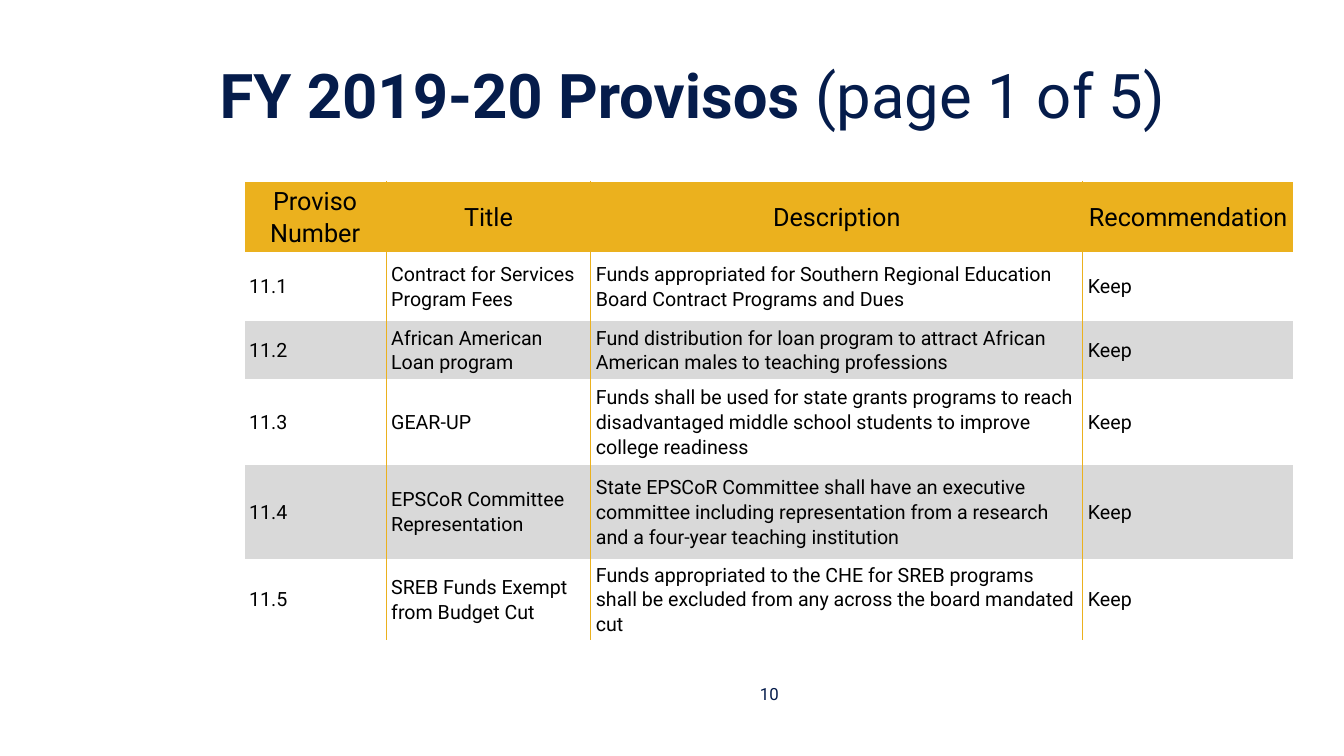
from dataclasses import dataclass

from lxml.etree import SubElement
from pptx import Presentation
from pptx.dml.color import RGBColor
from pptx.enum.text import MSO_ANCHOR as Anchor, PP_ALIGN as Align
from pptx.oxml.ns import qn
from pptx.util import Inches, Pt


@dataclass(frozen=True)
class Theme:
    font: str = "Roboto"
    navy: str = "051C4B"
    gold: str = "EBB11E"
    gray: str = "D9D9D9"
    white: str = "FFFFFF"
    black: str = "000000"
    title_size: int = 44
    header_size: int = 18
    body_size: int = 14
    number_size: int = 12
    line_spacing: float = 1.07
    plain_table: str = "{2D5ABB26-0587-4C30-8999-92F81FD0307C}"


HEADER = ["Proviso Number", "Title", "Description", "Recommendation"]
PROVISOS = [
    ["11.1", "Contract for Services Program Fees",
     "Funds appropriated for Southern Regional Education Board Contract Programs and Dues", "Keep"],
    ["11.2", "African American Loan program",
     "Fund distribution for loan program to attract African American males to teaching professions",
     "Keep"],
    ["11.3", "GEAR-UP",
     "Funds shall be used for state grants programs to reach disadvantaged middle school students "
     "to improve college readiness", "Keep"],
    ["11.4", "EPSCoR Committee Representation",
     "State EPSCoR Committee shall have an executive committee including representation from a "
     "research and a four-year teaching institution", "Keep"],
    ["11.5", "SREB Funds Exempt from Budget Cut",
     "Funds appropriated to the CHE for SREB programs shall be excluded from any across the board "
     "mandated cut", "Keep"],
]
COLUMN_WIDTHS = [1.41, 2.03, 4.88, 2.09]
ROW_HEIGHTS = [0.58, 0.68, 0.58, 0.85, 0.93, 0.8]


class SlideBuilder:
    def __init__(self, slide, theme):
        self.slide = slide
        self.theme = theme

    def style(self, para, size, color, align):
        para.alignment = align
        para.font.name = self.theme.font
        para.font.size = Pt(size)
        para.font.color.rgb = RGBColor.from_string(color)

    def text(self, place, spans, size, align):
        """Add a one-paragraph box from (wording, bold) spans."""
        frame = self.slide.shapes.add_textbox(*map(Inches, place)).text_frame
        frame.word_wrap = True
        frame.vertical_anchor = Anchor.MIDDLE
        para = frame.paragraphs[0]
        self.style(para, size, self.theme.navy, align)
        for wording, bold in spans:
            span = para.add_run()
            span.text = wording
            span.font.bold = bold

    def borders(self, cell, colors):
        """Put border lines ahead of the cell fill, as the schema asks."""
        properties = cell._tc.get_or_add_tcPr()
        for position, (side, color) in enumerate(colors.items()):
            line = SubElement(properties, qn(f"a:ln{side}"), w=str(Pt(1)))
            fill = SubElement(line, qn("a:solidFill"))
            SubElement(fill, qn("a:srgbClr"), val=color)
            properties.insert(position, line)

    def cell(self, cell, wording, fill, size, align):
        cell.fill.solid()
        cell.fill.fore_color.rgb = RGBColor.from_string(fill)
        cell.vertical_anchor = Anchor.MIDDLE
        cell.margin_left = cell.margin_right = Inches(0.05)
        cell.margin_top = cell.margin_bottom = Inches(0.03)
        cell.text = wording
        para = cell.text_frame.paragraphs[0]
        para.line_spacing = self.theme.line_spacing
        self.style(para, size, self.theme.black, align)

    def table(self, left, top, rows, widths, heights):
        theme = self.theme
        table = self.slide.shapes.add_table(
            len(rows), len(widths), Inches(left), Inches(top),
            Inches(sum(widths)), Inches(sum(heights))).table
        table._tbl.tblPr.find(qn("a:tableStyleId")).text = theme.plain_table
        for column, width in zip(table.columns, widths):
            column.width = Inches(width)
        for row, height in zip(table.rows, heights):
            row.height = Inches(height)
        last_row, last_column = len(rows) - 1, len(widths) - 1
        for r, row in enumerate(rows):
            for c, wording in enumerate(row):
                cell = table.cell(r, c)
                if r == 0:
                    self.cell(cell, wording, theme.gold, theme.header_size, Align.CENTER)
                else:
                    band = theme.white if r % 2 else theme.gray
                    self.cell(cell, wording, band, theme.body_size, Align.LEFT)
                # Gold rules between columns, white around the outside
                colors = {"L": theme.gold if c else theme.white,
                          "R": theme.gold if c < last_column else theme.white}
                if r == 0:
                    colors["T"] = theme.white
                if r == last_row:
                    colors["B"] = theme.white
                self.borders(cell, colors)


def main():
    deck = Presentation()
    deck.slide_width, deck.slide_height = Inches(13.33), Inches(7.5)
    theme = Theme()
    page = SlideBuilder(deck.slides.add_slide(deck.slide_layouts[6]), theme)

    # Title
    page.text((2.08, 0.31, 11.1, 1.25),
              [("FY 2019-20 Provisos ", True), ("(page 1 of 5)", False)],
              theme.title_size, Align.LEFT)

    # Provisos
    page.table(2.42, 1.8, [HEADER] + PROVISOS, COLUMN_WIDTHS, ROW_HEIGHTS)

    # Page number
    page.text((7.29, 6.68, 0.68, 0.4), [("10", False)], theme.number_size, Align.CENTER)

    deck.save("out.pptx")


if __name__ == "__main__":
    main()
